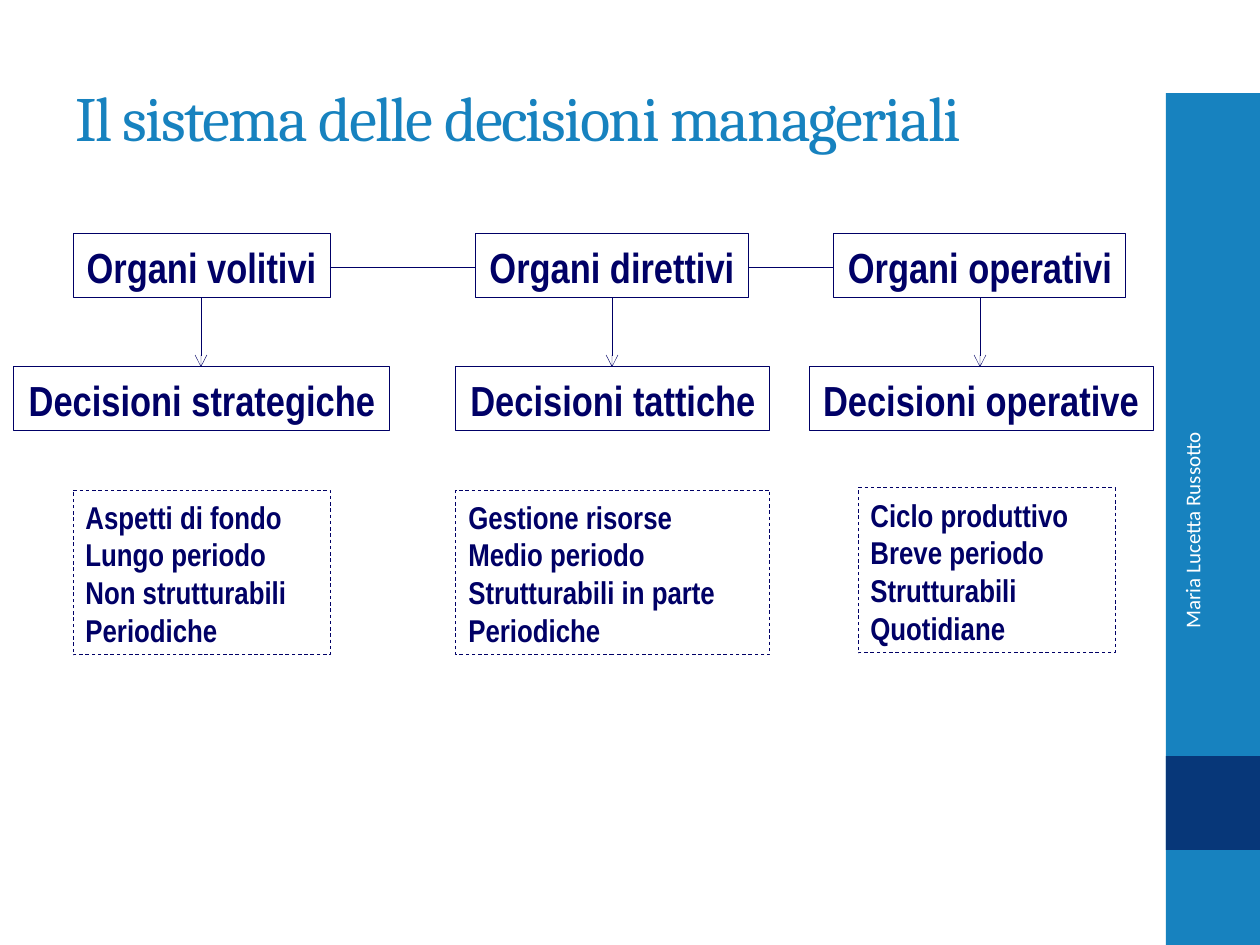
"""Build the slide on the system of managerial decisions."""
from dataclasses import dataclass

from lxml import etree
from pptx import Presentation
from pptx import util as u
from pptx.dml.color import RGBColor
from pptx.enum import dml, shapes, text
from pptx.oxml.ns import qn


@dataclass(frozen=True)
class Theme:
    """Colours, fonts and type sizes of the slide."""
    blue: str = "1782BF"
    navy: str = "073779"
    ink: str = "000066"
    white: str = "FFFFFF"
    title_font: str = "Cambria"
    box_font: str = "Arial Narrow"
    side_font: str = "Calibri"
    title_size: int = 36
    heading_size: int = 24
    detail_size: int = 18
    side_size: int = 12
    box_line: float = 0.5
    link_line: float = 0.25


THEME = Theme()
PX_PER_INCH = 126
ORGAN_TOP, DECISION_TOP, HEADING_HEIGHT = 234, 367, 64
LINK_Y, DETAIL_HEIGHT = 267, 165

COLUMNS = [
    {
        "organ": ("Organi volitivi", 73, 257),
        "decision": ("Decisioni strategiche", 14, 376),
        "details": (["Aspetti di fondo", "Lungo periodo", "Non strutturabili", "Periodiche"], 73, 490, 257),
    },
    {
        "organ": ("Organi direttivi", 475, 274),
        "decision": ("Decisioni tattiche", 456, 314),
        "details": (["Gestione risorse", "Medio periodo", "Strutturabili in parte", "Periodiche"], 456, 490, 314),
    },
    {
        "organ": ("Organi operativi", 834, 292),
        "decision": ("Decisioni operative", 809, 344),
        "details": (["Ciclo produttivo", "Breve periodo", "Strutturabili", "Quotidiane"], 858, 488, 257),
    },
]


def px(*lengths):
    """Turn pixel lengths into a list of EMU lengths."""
    return [u.Emu(round(length * 914400 / PX_PER_INCH)) for length in lengths]


def colour(value):
    """Return the colour object of a hex value."""
    return RGBColor.from_string(value)


def style(paragraph, font, size, value, bold=False):
    """Set the font of a whole paragraph."""
    paragraph.font.name = font
    paragraph.font.size = u.Pt(size)
    paragraph.font.color.rgb = colour(value)
    paragraph.font.bold = bold


def add_title(slide, title):
    """Fill and place the title placeholder."""
    shape = slide.shapes.title
    shape.left, shape.top, shape.width, shape.height = px(63, 38, 1050, 157)
    frame = shape.text_frame
    frame.text = title
    frame.vertical_anchor = text.MSO_ANCHOR.MIDDLE
    paragraph = frame.paragraphs[0]
    paragraph.alignment = text.PP_ALIGN.LEFT
    style(paragraph, THEME.title_font, THEME.title_size, THEME.blue)
    paragraph.runs[0].font._element.set("spc", "-100")


def add_band(slide, top, height, value):
    """Add a plain block of the right-hand side bar."""
    shape = slide.shapes.add_shape(shapes.MSO_SHAPE.RECTANGLE, *px(1166, top, 94, height))
    shape.shadow.inherit = False
    shape.fill.solid()
    shape.fill.fore_color.rgb = colour(value)
    shape.line.fill.background()


def add_side_text(slide, label):
    """Add the vertical label on the side bar."""
    shape = slide.shapes.add_textbox(*px(1029, 558, 326, 50))
    shape.rotation = 270
    frame = shape.text_frame
    frame.word_wrap = True
    frame.vertical_anchor = text.MSO_ANCHOR.MIDDLE
    frame.text = label
    frame.paragraphs[0].alignment = text.PP_ALIGN.RIGHT
    style(frame.paragraphs[0], THEME.side_font, THEME.side_size, THEME.white)


def add_box(slide, lines, bounds, size, alignment, dashed=False):
    """Add an outlined box holding one paragraph per line."""
    shape = slide.shapes.add_shape(shapes.MSO_SHAPE.RECTANGLE, *px(*bounds))
    shape.shadow.inherit = False
    shape.fill.background()
    shape.line.color.rgb = colour(THEME.ink)
    shape.line.width = u.Pt(THEME.box_line)
    if dashed:
        shape.line.dash_style = dml.MSO_LINE.DASH
    frame = shape.text_frame
    frame.word_wrap = dashed
    frame.auto_size = text.MSO_AUTO_SIZE.SHAPE_TO_FIT_TEXT
    frame.vertical_anchor = text.MSO_ANCHOR.BOTTOM
    frame.text = "\n".join(lines)
    for paragraph in frame.paragraphs:
        paragraph.alignment = alignment
        style(paragraph, THEME.box_font, size, THEME.ink, bold=True)


def add_heading(slide, label, left, top, width):
    """Add a solid box with one centred heading."""
    add_box(slide, [label], (left, top, width, HEADING_HEIGHT),
            THEME.heading_size, text.PP_ALIGN.CENTER)


def add_link(slide, start, end, arrow=False):
    """Join two points with a thin line, with or without an arrowhead."""
    connector = slide.shapes.add_connector(shapes.MSO_CONNECTOR.STRAIGHT, *px(*start, *end))
    connector.line.color.rgb = colour(THEME.ink)
    connector.line.width = u.Pt(THEME.link_line)
    if arrow:
        etree.SubElement(connector.line._get_or_add_ln(), qn("a:tailEnd"), type="arrow")
    etree.SubElement(connector._element.spPr, qn("a:effectLst"))


def add_column(slide, column):
    """Add an organ, its kind of decision and their features."""
    organ, left, width = column["organ"]
    add_heading(slide, organ, left, ORGAN_TOP, width)
    centre = left + width // 2
    add_link(slide, (centre, ORGAN_TOP + HEADING_HEIGHT), (centre, DECISION_TOP), arrow=True)
    decision, left, width = column["decision"]
    add_heading(slide, decision, left, DECISION_TOP, width)
    lines, left, top, width = column["details"]
    add_box(slide, lines, (left, top, width, DETAIL_HEIGHT),
            THEME.detail_size, text.PP_ALIGN.LEFT, dashed=True)


def main():
    """Build and save the presentation."""
    presentation = Presentation()
    presentation.slide_width, presentation.slide_height = px(1260, 945)
    slide = presentation.slides.add_slide(presentation.slide_layouts[5])
    add_band(slide, 93, 852, THEME.blue)
    add_band(slide, 756, 94, THEME.navy)
    add_title(slide, "Il sistema delle decisioni manageriali")
    for column in COLUMNS:
        add_column(slide, column)
    for before, after in zip(COLUMNS, COLUMNS[1:]):
        _, left, width = before["organ"]
        add_link(slide, (left + width, LINK_Y), (after["organ"][1], LINK_Y))
    add_side_text(slide, "Maria Lucetta Russotto")
    presentation.save("out.pptx")


if __name__ == "__main__":
    main()
